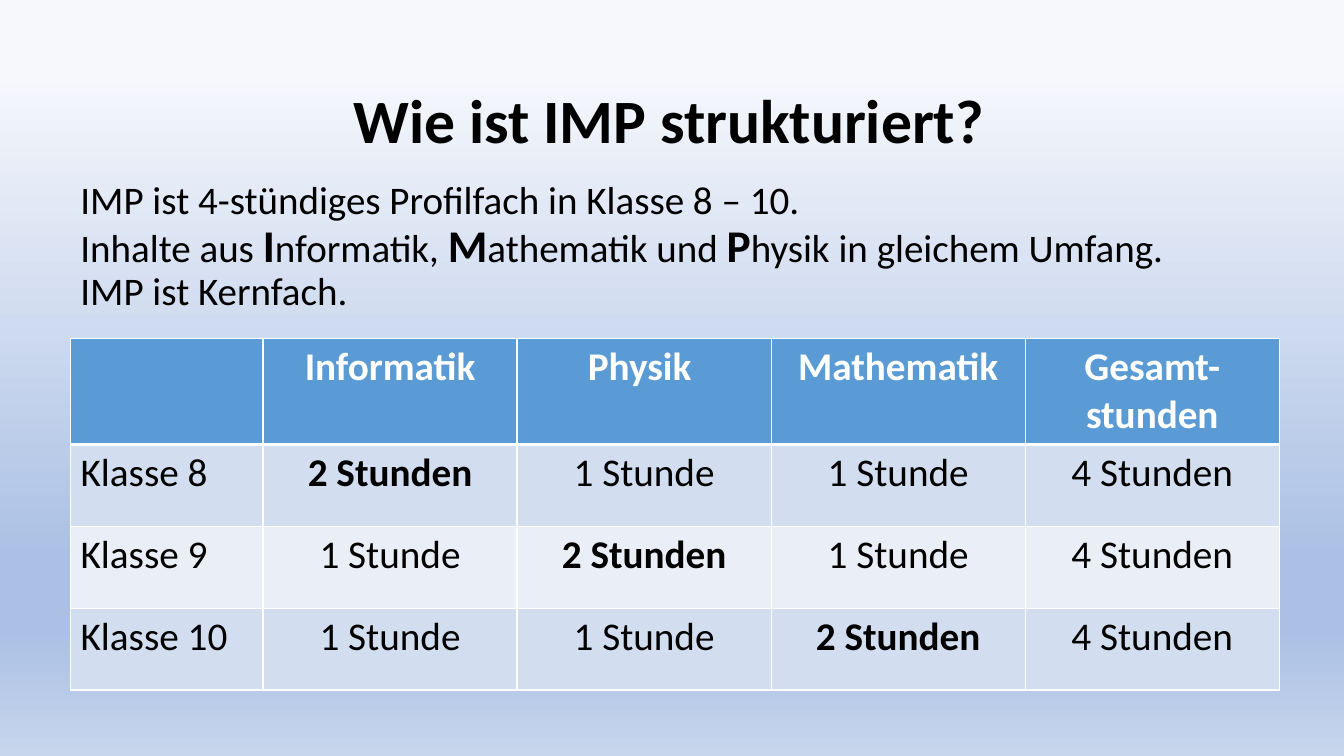
from lxml import etree
from pptx import Presentation
from pptx.dml.color import RGBColor
from pptx.enum.text import MSO_ANCHOR, PP_ALIGN
from pptx.oxml.ns import qn
from pptx.util import Pt

CENTER, LEFT = PP_ALIGN.CENTER, PP_ALIGN.LEFT
TOP = MSO_ANCHOR.TOP
FONT = "Calibri"
BLACK, WHITE = "000000", "FFFFFF"
HEADER_FILL, BAND_FILLS = "5B9BD5", ("D2DEEF", "EAEFF7")
BACKGROUND_STOPS = [(9, "F6F8FC"), (74, "ABC0E4"), (83, "ABC0E4"), (100, "C7D5ED")]

SUBJECTS = ["Informatik", "Physik ", "Mathematik"]
HEADINGS = ["", *SUBJECTS, "Gesamt-stunden"]
CLASSES = ["Klasse 8", "Klasse 9", "Klasse 10"]
# Each line is a list of (text, emphasised) pieces
INTRO = [
    [("IMP ist 4-stündiges Profilfach in Klasse 8 – 10.", False)],
    [("Inhalte aus ", False), ("I", True), ("nformatik, ", False),
     ("M", True), ("athematik und ", False),
     ("P", True), ("hysik in gleichem Umfang. ", False)],
    [("IMP ist Kernfach.", False)],
]


def color(hex_value):
    return RGBColor.from_string(hex_value)


def format_run(run, size, bold=False, hex_value=BLACK):
    run.font.name = FONT
    run.font.size = Pt(size)
    run.font.bold = bold
    run.font.color.rgb = color(hex_value)


def add_text_frame(slide, left, top, width, height):
    box = slide.shapes.add_textbox(Pt(left), Pt(top), Pt(width), Pt(height))
    frame = box.text_frame
    frame.word_wrap = True
    frame.vertical_anchor = TOP
    return frame


def paint_background(slide):
    fill = slide.background.fill
    fill.gradient()
    fill.gradient_angle = 270
    stops = slide.background._cSld.find(".//" + qn("a:gsLst"))
    for stop in list(stops):
        stops.remove(stop)
    for percent, hex_value in BACKGROUND_STOPS:
        stop = etree.SubElement(stops, qn("a:gs"), pos=str(percent * 1000))
        etree.SubElement(stop, qn("a:srgbClr"), val=hex_value)


def add_title(slide, left, top, width, height):
    frame = add_text_frame(slide, left, top, width, height)
    title = frame.paragraphs[0]
    title.text = "Wie ist IMP strukturiert?"
    title.alignment = CENTER
    format_run(title.runs[0], 44, bold=True)


def add_intro(slide, left, top, width, height):
    frame = add_text_frame(slide, left, top, width, height)
    frame.margin_top = Pt(11)
    for index, pieces in enumerate(INTRO):
        line = frame.add_paragraph() if index else frame.paragraphs[0]
        line.line_spacing = 0.9
        for text, emphasised in pieces:
            run = line.add_run()
            run.text = text
            format_run(run, 32.4 if emphasised else 27.9, emphasised)


def set_borders(cell, widths):
    properties = cell._tc.get_or_add_tcPr()
    for index, (side, width) in enumerate(widths.items()):
        border = etree.Element(qn("a:ln" + side), w=str(Pt(width)))
        fill = etree.SubElement(border, qn("a:solidFill"))
        etree.SubElement(fill, qn("a:srgbClr"), val=WHITE)
        properties.insert(index, border)


def fill_cell(cell, text, fill, align, bold, hex_value, top_line, bottom_line):
    cell.fill.solid()
    cell.fill.fore_color.rgb = color(fill)
    set_borders(cell, {"L": 1, "R": 1, "T": top_line, "B": bottom_line})
    if text:
        paragraph = cell.text_frame.paragraphs[0]
        paragraph.text = text
        paragraph.alignment = align
        format_run(paragraph.runs[0], 28, bold, hex_value)


def add_hours_table(slide, left, top, width, row_height):
    label_width = 137.5
    hours_width = (width - label_width) / (len(HEADINGS) - 1)
    table = slide.shapes.add_table(
        len(CLASSES) + 1, len(HEADINGS), Pt(left), Pt(top),
        Pt(width), Pt(row_height * (len(CLASSES) + 1))).table
    for index, column in enumerate(table.columns):
        column.width = Pt(hours_width if index else label_width)

    # Header row with a thicker line below
    for index, heading in enumerate(HEADINGS):
        fill_cell(table.cell(0, index), heading, HEADER_FILL, CENTER, True, WHITE, 1, 3)

    # Each class has two hours of one subject, moving along the diagonal
    for row, class_name in enumerate(CLASSES):
        hours = ["2 Stunden" if subject == row else "1 Stunde"
                 for subject in range(len(SUBJECTS))]
        for column, text in enumerate([class_name, *hours, "4 Stunden"]):
            fill_cell(table.cell(row + 1, column), text, BAND_FILLS[row % 2],
                      CENTER if column else LEFT, column == row + 1, BLACK,
                      1 if row else 3, 1)


def main():
    presentation = Presentation()
    presentation.slide_width, presentation.slide_height = Pt(960), Pt(540)
    slide = presentation.slides.add_slide(presentation.slide_layouts[6])
    paint_background(slide)
    add_hours_table(slide, 50.4, 241.8, 863.5, 58.5)
    add_title(slide, 76.3, 54.7, 803.5, 60.5)
    add_intro(slide, 50.4, 118, 828, 104.4)
    presentation.save("out.pptx")


if __name__ == "__main__":
    main()
